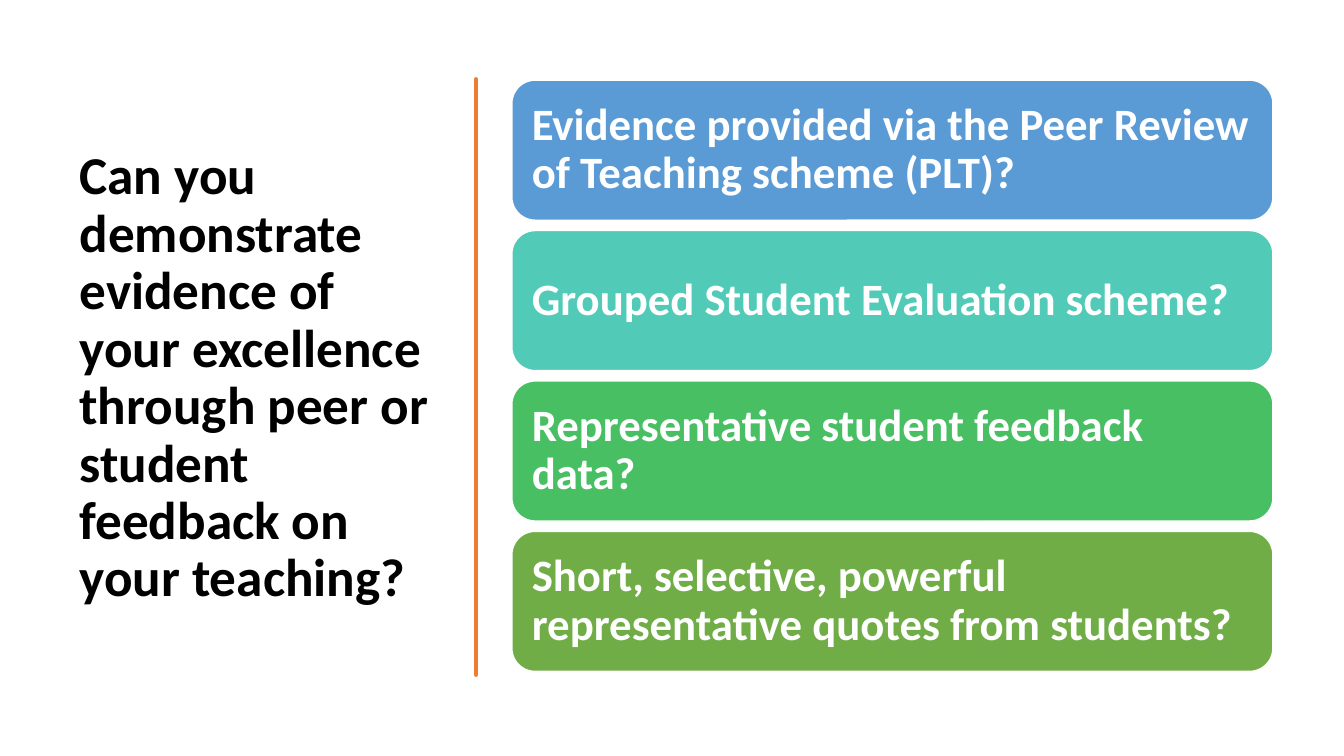
from dataclasses import dataclass

from pptx import Presentation
from pptx.dml.color import RGBColor
from pptx.enum.shapes import MSO_SHAPE
from pptx.enum.text import MSO_ANCHOR, MSO_AUTO_SIZE, PP_ALIGN
from pptx.util import Cm, Pt

FONT = "Calibri"
BLACK = RGBColor(0x00, 0x00, 0x00)
WHITE = RGBColor(0xFF, 0xFF, 0xFF)
ORANGE = RGBColor(0xED, 0x7D, 0x31)
BLUE = RGBColor(0x5B, 0x9B, 0xD5)
TEAL = RGBColor(0x52, 0xCA, 0xB8)
GREEN = RGBColor(0x49, 0xBF, 0x64)
OLIVE = RGBColor(0x70, 0xAD, 0x47)


@dataclass
class Card:
    text: str
    color: RGBColor


@dataclass
class Wave:
    """Stretch of the divider's edge down to end_y, with two sideways pulls (cm)."""
    end_y: float
    pull_1: float
    pull_2: float


CARDS = [
    Card("Evidence provided via the Peer Review of Teaching scheme (PLT)?", BLUE),
    Card("Grouped Student Evaluation scheme?", TEAL),
    Card("Representative student feedback data?", GREEN),
    Card("Short, selective, powerful representative quotes from students?", OLIVE),
]
CARD_LEFT, CARD_TOP, CARD_WIDTH, CARD_HEIGHT = 12.9, 2.02, 19.18, 3.53
CARD_PITCH = 3.79

DIVIDER_TOP, DIVIDER_BOTTOM = 2.13, 17.17
LEFT_X, RIGHT_X = 12.01, 12.06
RIGHT_EDGE = [
    Wave(3.71, 0.05, 0.05), Wave(5.74, -0.05, 0.03), Wave(7.47, -0.03, 0),
    Wave(9.04, -0.03, 0.05), Wave(11.07, -0.05, 0.1), Wave(12.95, -0.1, -0.08),
    Wave(14.83, 0.05, 0.05), Wave(DIVIDER_BOTTOM, -0.05, 0.03),
]
LEFT_EDGE = [
    Wave(15.57, 0.03, -0.05), Wave(14.15, 0.03, 0.03), Wave(12.12, -0.03, 0),
    Wave(10.54, 0, -0.05), Wave(8.51, 0.03, -0.03), Wave(6.35, 0.03, -0.03),
    Wave(4.6, 0.03, 0.05), Wave(DIVIDER_TOP, -0.08, 0.1),
]


def format_text(tf, size: float, color: RGBColor) -> None:
    tf.word_wrap = True
    tf.auto_size = MSO_AUTO_SIZE.NONE
    tf.vertical_anchor = MSO_ANCHOR.MIDDLE
    for p in tf.paragraphs:
        p.alignment = PP_ALIGN.LEFT
        p.line_spacing = 0.9
        for r in p.runs:
            r.font.name = FONT
            r.font.size = Pt(size)
            r.font.bold = True
            r.font.color.rgb = color


def edge_points(x: float, y: float, waves: list[Wave], steps: int = 8) -> list[tuple[float, float]]:
    points = [(x, y)]
    for wave in waves:
        for i in range(1, steps + 1):
            t = i / steps
            shift = 3 * t * (1 - t) * ((1 - t) * wave.pull_1 + t * wave.pull_2)
            points.append((x + shift, y + t * (wave.end_y - y)))
        y = wave.end_y
    return points


def add_divider(s) -> None:
    points = (edge_points(RIGHT_X, DIVIDER_TOP, RIGHT_EDGE)
              + edge_points(LEFT_X, DIVIDER_BOTTOM, LEFT_EDGE))
    builder = s.shapes.build_freeform(*points[0], scale=Cm(1))
    builder.add_line_segments(points[1:], close=True)
    sp = builder.convert_to_shape()
    sp.shadow.inherit = False
    sp.fill.solid()
    sp.fill.fore_color.rgb = ORANGE
    sp.line.color.rgb = ORANGE
    sp.line.width = Pt(3.25)


def add_card(s, card: Card, top: float) -> None:
    sp = s.shapes.add_shape(MSO_SHAPE.ROUNDED_RECTANGLE, Cm(CARD_LEFT), Cm(top),
                            Cm(CARD_WIDTH), Cm(CARD_HEIGHT))
    sp.shadow.inherit = False
    sp.fill.solid()
    sp.fill.fore_color.rgb = card.color
    sp.line.color.rgb = WHITE
    sp.line.width = Pt(1)
    tf = sp.text_frame
    tf.text = card.text
    tf.margin_left = tf.margin_right = tf.margin_top = tf.margin_bottom = Cm(0.33)
    format_text(tf, 32, WHITE)


def main() -> None:
    prs = Presentation()
    prs.slide_width, prs.slide_height = Cm(33.87), Cm(19.05)
    s = prs.slides.add_slide(prs.slide_layouts[5])

    # Question on the left
    title = s.shapes.title
    title.left, title.top, title.width, title.height = Cm(1.75), Cm(1.78), Cm(9.5), Cm(15.52)
    title.text_frame.text = ("Can you demonstrate evidence of your excellence "
                             "through peer or student feedback on your teaching?")
    format_text(title.text_frame, 38, BLACK)

    # Hand-drawn divider
    add_divider(s)

    # Stack of evidence cards
    for i, card in enumerate(CARDS):
        add_card(s, card, CARD_TOP + i * CARD_PITCH)

    prs.save("out.pptx")


if __name__ == "__main__":
    main()
